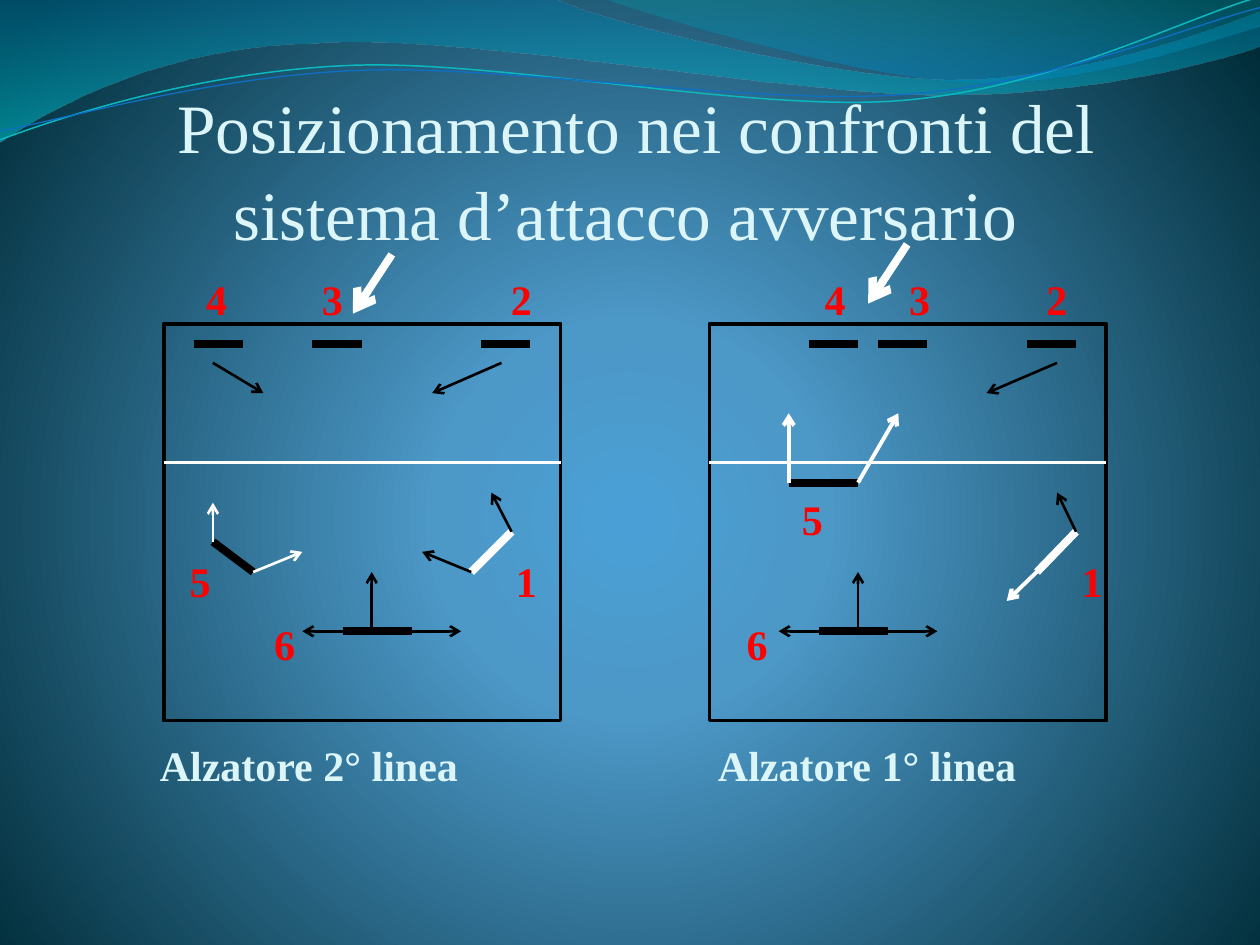
import pptx
import pptx.dml.color
import pptx.enum.shapes
import pptx.enum.text
import pptx.oxml
import pptx.oxml.ns
import pptx.util
from pptx.util import Inches

BLACK, WHITE, RED, PALE = "000000", "FFFFFF", "FF0000", "DBF5F9"
NS = pptx.oxml.ns.nsdecls("a")
color = pptx.dml.color.RGBColor.from_string


def set_gradient(owner, stops, direction):
    """Replace the owner's default gradient; stops are (percent, colour, opacity)."""
    stop_xml = "".join(
        f'<a:gs pos="{pos * 1000}"><a:srgbClr val="{hue}">'
        f'<a:alpha val="{opacity * 1000}"/></a:srgbClr></a:gs>'
        for pos, hue, opacity in stops)
    default = owner.find(".//" + pptx.oxml.ns.qn("a:gradFill"))
    default.getparent().replace(default, pptx.oxml.parse_xml(
        f'<a:gradFill {NS} rotWithShape="1">'
        f"<a:gsLst>{stop_xml}</a:gsLst>{direction}</a:gradFill>"))


def format_run(run, font, size, hue, bold):
    run.font.name = font
    run.font.size = pptx.util.Pt(size)
    run.font.color.rgb = color(hue)
    run.font.bold = bold


prs = pptx.Presentation()
prs.slide_width, prs.slide_height = Inches(10), Inches(7.5)
slide = prs.slides.add_slide(prs.slide_layouts[6])

slide.background.fill.gradient()
set_gradient(
    slide.element,
    [(0, "4AA0D6", 100), (25, "4C98C7", 100), (100, "002C38", 100)],
    '<a:path path="circle"><a:fillToRect l="10000" t="110000" r="10000" b="100000"/></a:path>')

# Waves: a pair of numbers is a straight step, six numbers are a Bezier curve
waves = [
    ([(0, 0), (4.4, -0.01), (4.76, 0.17, 6.64, 0.63, 7.58, 0.63),
      (8.53, 0.63, 9.58, 0.26, 10, 0.09), (10.01, 0.36),
      (9.83, 0.44, 8.7, 0.76, 7.46, 0.75), (6.22, 0.75, 3.82, 0.28, 2.57, 0.34),
      (1.29, 0.36, 0.46, 0.83, -0.01, 1.13)],
     [(0, "0074A1", 45), (100, "00C6CF", 55)], None, 0),
    ([(4.79, -0.01), (5.09, 0.11, 6.82, 0.62, 7.69, 0.65),
      (8.56, 0.69, 9.61, 0.32, 10, 0.21), (10, 0)],
     [(0, "00A1A9", 30), (80, "008BBF", 45)], None, 0),
    ([(0, 1.11), (0.48, 0.93, 1.58, 0.57, 2.77, 0.52),
      (3.95, 0.47, 5.93, 0.89, 7.13, 0.8), (8.33, 0.71, 9.38, 0.15, 9.98, -0.02)],
     None, "0AB8BF", 0.85),
    ([(0, 1.04), (0.47, 0.96, 1.64, 0.61, 2.83, 0.56),
      (4.03, 0.51, 5.97, 0.84, 7.17, 0.75), (8.36, 0.67, 9.41, 0.21, 10, 0.06)],
     None, "0F6FC6", 0.75),
]
for steps, stops, edge, edge_width in waves:
    ends = [(Inches(step[-2]), Inches(step[-1])) for step in steps]
    builder = slide.shapes.build_freeform(*ends[0])
    builder.add_line_segments(ends[1:], close=stops is not None)
    wave = builder.convert_to_shape()
    wave.shadow.inherit = False
    # Turn the straight segments of the curved steps into Bezier segments
    segments = wave.element.findall(".//" + pptx.oxml.ns.qn("a:lnTo"))
    for step, segment in zip(steps[1:], segments):
        if len(step) == 6:
            controls = "".join(
                f'<a:pt x="{Inches(x) - wave.left}" y="{Inches(y) - wave.top}"/>'
                for x, y in zip(step[::2], step[1::2]))
            segment.getparent().replace(segment, pptx.oxml.parse_xml(
                f"<a:cubicBezTo {NS}>{controls}</a:cubicBezTo>"))
    if stops:
        wave.fill.gradient()
        set_gradient(wave.element, stops, '<a:lin ang="5400000" scaled="0"/>')
        wave.line.fill.background()
    else:
        wave.fill.background()
        wave.line.color.rgb = color(edge)
        wave.line.width = pptx.util.Pt(edge_width)

title = slide.shapes.add_textbox(Inches(0.43), Inches(0.52), Inches(9.07), Inches(1.5)).text_frame
title.word_wrap = True
title.vertical_anchor = pptx.enum.text.MSO_ANCHOR.BOTTOM
title.margin_left = title.margin_right = title.margin_bottom = 0
heading = title.paragraphs[0]
heading.alignment = pptx.enum.text.PP_ALIGN.CENTER
heading.line_spacing = pptx.util.Pt(48.5)
for text, font, size in (
        (" ", "Arial", 45),
        ("Posizionamento nei confronti del sistema d’attacco avversario",
         "Times New Roman", 39.6)):
    run = heading.add_run()
    run.text = text
    format_run(run, font, size, PALE, False)

# Each row: labels with their x position, space before in points, colour, tab alignment
label_rows = [
    ([("4", 1.72), ("3", 2.64), ("2", 4.14), ("4", 6.63), ("3", 7.3), ("2", 8.39)],
     0, RED, "ctr"),
    ([("5", 6.45)], 96.9, RED, "ctr"),
    ([("5", 1.59), ("1", 4.18), ("1", 8.67)], 6.9, RED, "ctr"),
    ([("6", 2.26), ("6", 6.01)], 7.3, RED, "ctr"),
    ([("Alzatore 2° linea", 1.27), ("Alzatore 1° linea", 5.7)], 40.4, PALE, "l"),
]
BODY_LEFT, BODY_INSET = 0.5, 0.1
body = slide.shapes.add_textbox(
    Inches(BODY_LEFT), Inches(2.12), Inches(9), Inches(4.8)).text_frame
body.word_wrap = True
for index, (labels, gap, hue, tab_align) in enumerate(label_rows):
    row = body.add_paragraph() if index else body.paragraphs[0]
    row.text = "".join("\t" + label for label, x in labels)
    row.space_before = pptx.util.Pt(gap)
    for run in row.runs:
        format_run(run, "Times New Roman", 24, hue, True)
    tabs = "".join(
        f'<a:tab pos="{Inches(x - BODY_LEFT - BODY_INSET)}" algn="{tab_align}"/>'
        for label, x in labels)
    row._p.get_or_add_pPr().append(
        pptx.oxml.parse_xml(f"<a:tabLst {NS}>{tabs}</a:tabLst>"))

COURT_TOP, COURT_SIDE, ATTACK_LINE, NET_ROW = 2.57, 3.15, 3.67, 2.73
court_lefts = (1.3, 5.63)
for left in court_lefts:
    court = slide.shapes.add_shape(
        pptx.enum.shapes.MSO_SHAPE.RECTANGLE, Inches(left), Inches(COURT_TOP),
        Inches(COURT_SIDE), Inches(COURT_SIDE))
    court.shadow.inherit = False
    court.fill.background()
    court.line.color.rgb = color(BLACK)
    court.line.width = pptx.util.Pt(2)

# Each stroke: x1, y1, x2, y2, colour, width, arrowhead
strokes = [(left, ATTACK_LINE, left + COURT_SIDE, ATTACK_LINE, WHITE, 1.5, False)
           for left in court_lefts]
strokes += [(x, NET_ROW, x + 0.39, NET_ROW, BLACK, 4.5, False)
            for x in (1.54, 2.48, 3.82, 6.42, 6.97, 8.15)]
for x, jump_x in ((2.72, 2.95), (6.5, 6.81)):  # player 6
    strokes += [
        (x, 5.01, x + 0.55, 5.01, BLACK, 4.5, False),
        (x, 5.01, x - 0.32, 5.01, BLACK, 1.5, True),
        (x + 0.55, 5.01, x + 0.94, 5.01, BLACK, 1.5, True),
        (jump_x, 5.01, jump_x, 4.54, BLACK, 1.5, True)]
strokes += [
    # Left court
    (1.69, 4.3, 2.01, 4.54, BLACK, 4.5, False),
    (3.74, 4.54, 4.06, 4.22, WHITE, 4.5, False),
    (1.69, 4.3, 1.69, 3.99, WHITE, 1.5, True),
    (2.01, 4.54, 2.4, 4.38, WHITE, 1.5, True),
    (4.06, 4.22, 3.9, 3.91, BLACK, 1.5, True),
    (3.74, 4.54, 3.35, 4.38, BLACK, 1.5, True),
    (1.69, 2.88, 2.09, 3.12, BLACK, 1.5, True),
    (3.98, 2.88, 3.43, 3.12, BLACK, 1.5, True),
    (3.11, 2.02, 2.8, 2.49, WHITE, 4.5, True),
    # Right court
    (6.26, 3.83, 6.81, 3.83, BLACK, 4.5, False),
    (8.23, 4.54, 8.54, 4.22, WHITE, 4.5, False),
    (8.39, 2.88, 7.83, 3.12, BLACK, 1.5, True),
    (6.26, 3.83, 6.26, 3.28, WHITE, 2.25, True),
    (6.81, 3.83, 7.13, 3.28, WHITE, 2.25, True),
    (8.54, 4.22, 8.39, 3.91, BLACK, 1.5, True),
    (8.31, 4.46, 7.99, 4.77, WHITE, 2.25, True),
    (7.2, 1.94, 6.89, 2.41, WHITE, 4.5, True),
]
for x1, y1, x2, y2, hue, width, has_arrow in strokes:
    stroke = slide.shapes.add_connector(
        pptx.enum.shapes.MSO_CONNECTOR.STRAIGHT,
        Inches(x1), Inches(y1), Inches(x2), Inches(y2))
    stroke.line.color.rgb = color(hue)
    stroke.line.width = pptx.util.Pt(width)
    if has_arrow:
        stroke.line._get_or_add_ln().append(
            pptx.oxml.parse_xml(f'<a:tailEnd {NS} type="arrow"/>'))
    stroke.element.spPr.append(pptx.oxml.parse_xml(f"<a:effectLst {NS}/>"))

prs.save("out.pptx")
